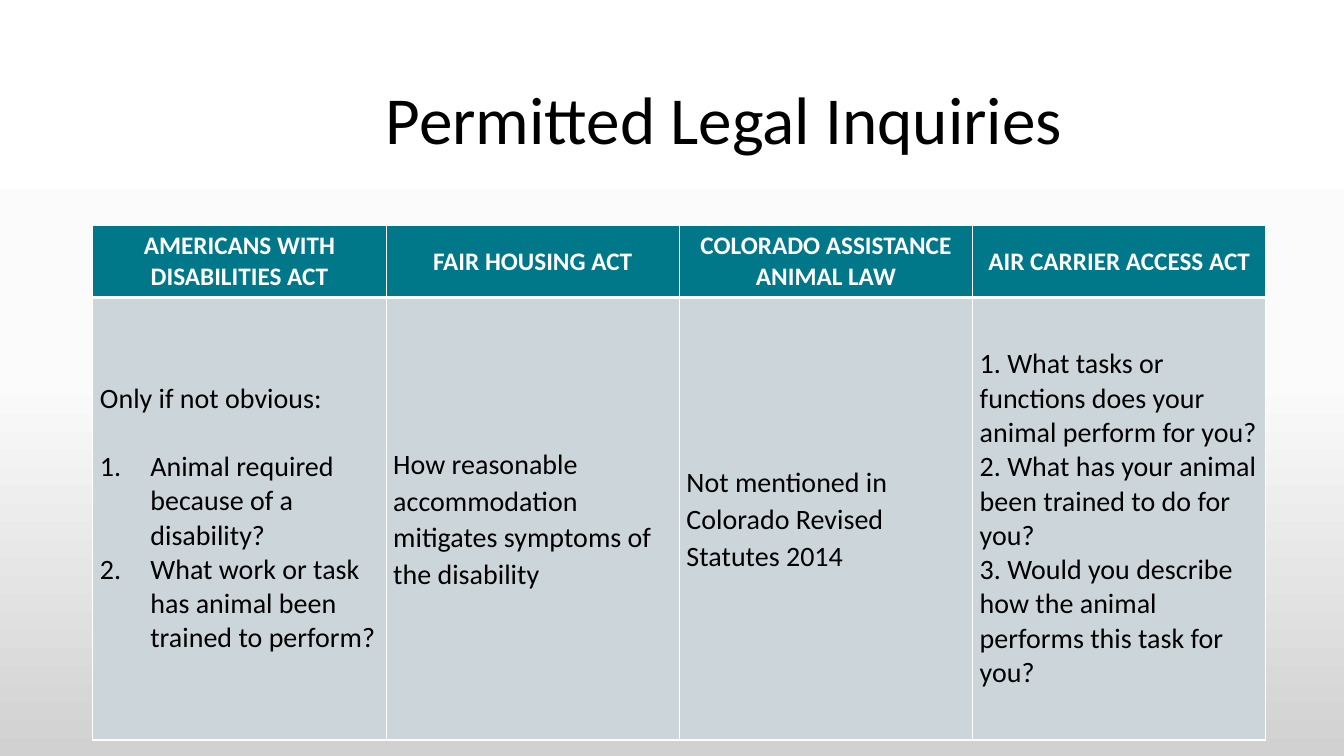
from copy import deepcopy

from lxml import etree
from pptx import Presentation
from pptx.dml.color import RGBColor
from pptx.enum import text
from pptx.oxml import ns
from pptx.util import Cm, Pt

TITLE = "Permitted Legal Inquiries"
COLUMNS = [
    ("AMERICANS WITH DISABILITIES ACT",
     ["Only if not obvious:",
      "Animal required because of a disability?",
      "What work or task has animal been trained to perform?"]),
    ("FAIR HOUSING ACT",
     ["How reasonable accommodation mitigates symptoms of the disability"]),
    ("COLORADO ASSISTANCE ANIMAL LAW",
     ["Not mentioned in Colorado Revised Statutes 2014"]),
    ("AIR CARRIER ACCESS ACT",
     ["1. What tasks or functions does your animal perform for you?",
      "2. What has your animal been trained to do for you?",
      "3. Would you describe how the animal performs this task for you?"]),
]
NUMBERED_COLUMN = 0

FONT = "Calibri"
WHITE = RGBColor(0xFF, 0xFF, 0xFF)
BLACK = RGBColor(0x00, 0x00, 0x00)
TEAL = RGBColor(0x00, 0x78, 0x8A)
PALE = RGBColor(0xCC, 0xD6, 0xDA)
BACKGROUND = [(0, WHITE), (0.5, RGBColor(0xFB, 0xFB, 0xFB)),
              (1, RGBColor(0xD1, 0xD1, 0xD1))]

COLUMN_WIDTH = Cm(7.39)
ROW_HEIGHTS = [Cm(1.8), Cm(11.15)]
INDENT = Cm(1.27)


def set_background(s):
    fill = s.background.fill
    fill.gradient()
    fill.gradient_angle = 270
    stops = fill.gradient_stops
    stop_list = s.background._cSld.find(".//" + ns.qn("a:gsLst"))
    stop_list.append(deepcopy(stop_list[0]))
    for stop, (position, color) in zip(fill.gradient_stops, BACKGROUND):
        stop.position = position
        stop.color.rgb = color


def set_borders(cell, widths):
    tc_pr = cell._tc.get_or_add_tcPr()
    for side, width in zip("LRTB", widths):
        line = etree.SubElement(tc_pr, ns.qn(f"a:ln{side}"), w=str(Pt(width)))
        solid = etree.SubElement(line, ns.qn("a:solidFill"))
        etree.SubElement(solid, ns.qn("a:srgbClr"), val=str(WHITE))


def number(p):
    p_pr = p._p.get_or_add_pPr()
    p_pr.set("marL", str(INDENT))
    p_pr.set("indent", str(-INDENT))
    etree.SubElement(p_pr, ns.qn("a:buFont"), typeface="+mj-lt")
    etree.SubElement(p_pr, ns.qn("a:buAutoNum"), type="arabicPeriod")


def style(p, size, color, bold=False):
    for r in p.runs:
        r.font.name = FONT
        r.font.size = Pt(size)
        r.font.bold = bold
        r.font.color.rgb = color


def fill_cell(cell, lines, fill, borders):
    set_borders(cell, borders)
    cell.fill.solid()
    cell.fill.fore_color.rgb = fill
    cell.vertical_anchor = text.MSO_ANCHOR.MIDDLE
    cell.text_frame.text = "\n".join(lines)
    return cell.text_frame.paragraphs


prs = Presentation()
prs.slide_width, prs.slide_height = Cm(33.87), Cm(19.05)
s = prs.slides.add_slide(prs.slide_layouts[5])
set_background(s)

title = s.shapes.title
title.left, title.top, title.width, title.height = Cm(9.47), Cm(2.29), Cm(22.4), Cm(1.63)
tf = title.text_frame
tf.text = TITLE
tf.auto_size = text.MSO_AUTO_SIZE.NONE
tf.vertical_anchor = text.MSO_ANCHOR.MIDDLE
p = tf.paragraphs[0]
p.alignment = text.PP_ALIGN.LEFT
p.line_spacing = 0.9
style(p, 48, BLACK)

table = s.shapes.add_table(2, len(COLUMNS), Cm(2.34), Cm(5.69),
                           COLUMN_WIDTH * len(COLUMNS), sum(ROW_HEIGHTS)).table
for row, height in zip(table.rows, ROW_HEIGHTS):
    row.height = height

for i, (heading, lines) in enumerate(COLUMNS):
    table.columns[i].width = COLUMN_WIDTH

    for p in fill_cell(table.cell(0, i), [heading], TEAL, (1, 1, 1, 3)):
        p.alignment = text.PP_ALIGN.CENTER
        style(p, 18, WHITE, bold=True)

    body = table.cell(1, i)
    paragraphs = fill_cell(body, lines, PALE, (1, 1, 3, 1))
    body.margin_left = body.margin_right = Cm(0.18)
    body.margin_top = body.margin_bottom = 0
    for p in paragraphs:
        if len(lines) == 1:
            p.line_spacing = 1.07
        style(p, 20, BLACK)
    if i == NUMBERED_COLUMN:
        paragraphs[1].space_before = Pt(24)
        for p in paragraphs[1:]:
            number(p)

prs.save("out.pptx")
